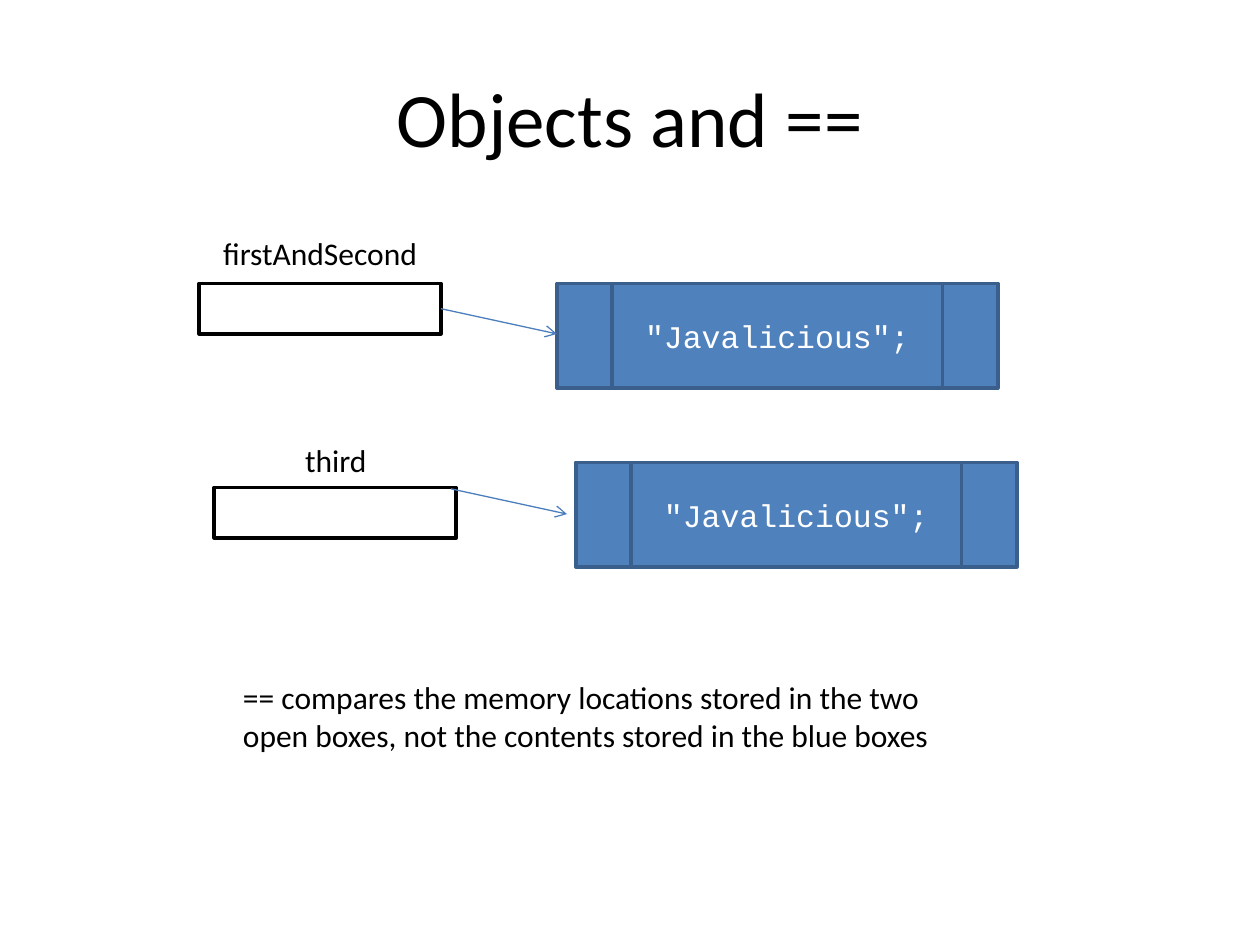
from lxml.etree import SubElement
from pptx import Presentation
from pptx.dml.color import RGBColor
from pptx.enum.shapes import MSO_CONNECTOR as Connector, MSO_SHAPE as Shape
from pptx.enum.text import MSO_ANCHOR as Anchor, PP_ALIGN as Align
from pptx.oxml.ns import qn
from pptx.util import Pt

PX = 9144  # EMU per px, at 100 px to the inch

BLACK = RGBColor(0x00, 0x00, 0x00)
WHITE = RGBColor(0xFF, 0xFF, 0xFF)
BLUE = RGBColor(0x4F, 0x81, 0xBD)
DARK_BLUE = RGBColor(0x3A, 0x5F, 0x8C)
ARROW_BLUE = RGBColor(0x4B, 0x7E, 0xBC)


class Diagram:
    body_font, code_font = "Calibri", "Courier New"
    text_size, border = 18, 2

    def __init__(self, slide):
        self.shapes = slide.shapes

    def fill_text(self, frame, text, font, size, color, align, anchor):
        frame.word_wrap = True
        frame.vertical_anchor = anchor
        frame.text = text
        paragraph = frame.paragraphs[0]
        paragraph.alignment = align
        style = paragraph.runs[0].font
        style.name, style.size = font, Pt(size)
        style.color.rgb = color

    def text(self, box, text, size=text_size, align=Align.CENTER, anchor=Anchor.TOP):
        label = self.shapes.add_textbox(*(n * PX for n in box))
        self.fill_text(label.text_frame, text, self.body_font, size, BLACK, align, anchor)

    def outline(self, kind, box, color):
        shape = self.shapes.add_shape(kind, *(n * PX for n in box))
        shape.shadow.inherit = False
        shape.line.color.rgb = color
        shape.line.width = Pt(self.border)
        return shape

    def variable(self, box):
        self.outline(Shape.RECTANGLE, box, BLACK).fill.background()

    def string_object(self, box, text):
        block = self.outline(Shape.FLOWCHART_PREDEFINED_PROCESS, box, DARK_BLUE)
        block.fill.solid()
        block.fill.fore_color.rgb = BLUE
        self.fill_text(block.text_frame, text, self.code_font, self.text_size,
                       WHITE, Align.CENTER, Anchor.MIDDLE)

    def reference(self, x, y, dx=92, dy=20):
        ends = (n * PX for n in (x, y, x + dx, y + dy))
        arrow = self.shapes.add_connector(Connector.STRAIGHT, *ends)
        arrow.line.color.rgb = ARROW_BLUE
        arrow.line.width = Pt(0.75)
        properties = arrow._element.spPr
        SubElement(properties.find(qn("a:ln")), qn("a:tailEnd"), type="arrow")
        SubElement(properties, qn("a:effectLst"))


def main():
    deck = Presentation()
    deck.slide_width, deck.slide_height = 1000 * PX, 750 * PX
    diagram = Diagram(deck.slides.add_slide(deck.slide_layouts[6]))

    # Title
    diagram.text((50, 30, 900, 125), "Objects and ==", size=44, anchor=Anchor.MIDDLE)

    # Each variable: name, its label, its open box, arrow start, string object
    variables = [
        ("firstAndSecond", (158, 181, 192, 40), (158, 225), (350, 245), (442, 225)),
        ("third", (183, 345, 167, 40), (170, 387), (358, 388), (457, 367)),
    ]
    for name, label, open_box, arrow_start, string_at in variables:
        diagram.string_object((*string_at, 350, 83), '"Javalicious";')
        diagram.variable((*open_box, 192, 40))
        diagram.text(label, name)
        diagram.reference(*arrow_start)

    # Explanation
    diagram.text((183, 533, 608, 71),
                 "== compares the memory locations stored in the two open boxes, "
                 "not the contents stored in the blue boxes", align=Align.LEFT)

    deck.save("out.pptx")


if __name__ == "__main__":
    main()
